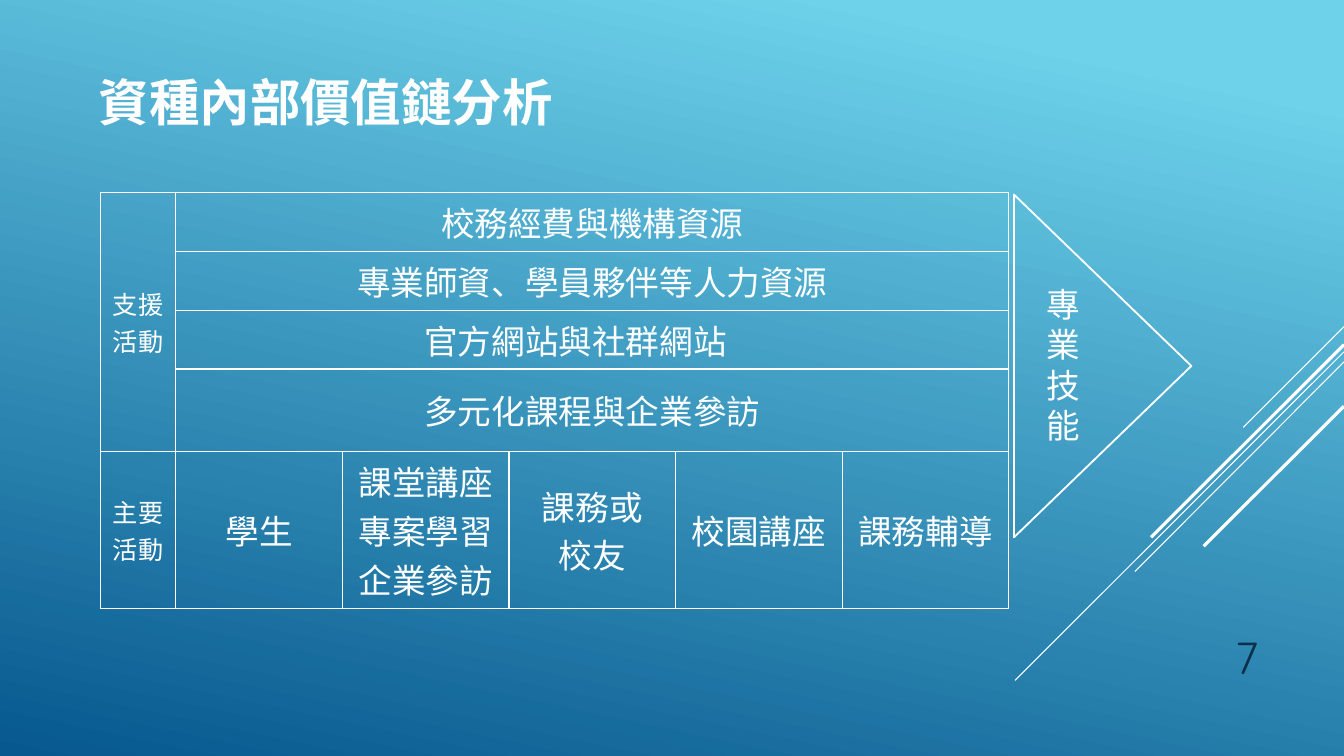
import pptx
import pptx.util
import pptx.dml.color
import pptx.enum.shapes
import pptx.enum.text
import pptx.oxml
import pptx.oxml.ns
import lxml.etree

Pt = pptx.util.Pt
ALIGN = pptx.enum.text.PP_ALIGN
ANCHOR = pptx.enum.text.MSO_ANCHOR
SHAPE = pptx.enum.shapes.MSO_SHAPE
WHITE = "FFFFFF"

SUPPORT_ACTIVITIES = ["校務經費與機構資源", "專業師資、學員夥伴等人力資源", "官方網站與社群網站　", "多元化課程與企業參訪"]
PRIMARY_ACTIVITIES = ["學生", "課堂講座專案學習\n企業參訪", "課務或\n校友", "校園講座", "課務輔導"]
ROW_HEIGHTS = [42, 42, 42, 59, 112]
STRIPES = [
    (960, 233.3, 888, 305.3, 0.75),
    (960, 251.3, 725, 486, 0.75),
    (960, 258.5, 810.7, 408.2, 0.75),
    (960, 246.2, 822.2, 383.8, 2.25),
    (960, 290.2, 859.7, 390.2, 2.25),
]


def rgb(hex_color):
    return pptx.dml.color.RGBColor.from_string(hex_color)


def write(frame, text, size=24, font="Arial", color=WHITE, bold=False,
          align=ALIGN.CENTER, anchor=ANCHOR.MIDDLE, spacing=None):
    frame.word_wrap = True
    frame.vertical_anchor = anchor
    frame.text = text
    for paragraph in frame.paragraphs:
        paragraph.alignment = align
        if spacing:
            paragraph.line_spacing = Pt(spacing)
        for run in paragraph.runs:
            run.font.name = font
            run.font.size = Pt(size)
            run.font.bold = bold
            run.font.color.rgb = rgb(color)


def paint_background(slide):
    fill = slide.background.fill
    fill.gradient()
    fill.gradient_angle = 258
    for stop, color, position in zip(fill.gradient_stops, ["6ED2EB", "06588E"], [0.1, 1]):
        stop.color.rgb = rgb(color)
        stop.position = position


def draw_stripes(slide):
    for x1, y1, x2, y2, width in STRIPES:
        stripe = slide.shapes.add_connector(
            pptx.enum.shapes.MSO_CONNECTOR.STRAIGHT, Pt(x1), Pt(y1), Pt(x2), Pt(y2))
        stripe.line.color.rgb = rgb(WHITE)
        stripe.line.width = Pt(width)
        lxml.etree.SubElement(stripe._element.spPr, pptx.oxml.ns.qn("a:effectLst"))


def place_title(slide, left, top, width, height):
    title = slide.shapes.title
    title.left, title.top, title.width, title.height = Pt(left), Pt(top), Pt(width), Pt(height)
    write(title.text_frame, "資種內部價值鏈分析", size=36, font="Quicksand", bold=True, align=ALIGN.LEFT)


def draw_margin_arrow(slide, left, top, width, height):
    arrow = slide.shapes.add_shape(
        SHAPE.ISOSCELES_TRIANGLE, Pt(left + (width - height) / 2),
        Pt(top + (height - width) / 2), Pt(height), Pt(width))
    arrow.rotation = 90
    arrow.shadow.inherit = False
    arrow.fill.background()
    arrow.line.color.rgb = rgb(WHITE)
    arrow.line.width = Pt(1.3)
    skills = slide.shapes.add_textbox(Pt(left + 15.5), Pt(top + (height - 124) / 2), Pt(39.6), Pt(124))
    write(skills.text_frame, "專業技能", font="Quicksand", anchor=ANCHOR.TOP, spacing=28.8)


def outline_cell(cell):
    cell.fill.background()
    properties = cell._tc.get_or_add_tcPr()
    for index, side in enumerate(["lnL", "lnR", "lnT", "lnB"]):
        properties.insert(index, pptx.oxml.parse_xml(
            f'<a:{side} {pptx.oxml.ns.nsdecls("a")} w="12700"><a:solidFill>'
            f'<a:srgbClr val="{WHITE}"/></a:solidFill></a:{side}>'))


def build_value_chain(slide, left, top, width, height):
    chain = slide.shapes.add_table(5, 6, Pt(left), Pt(top), Pt(width), Pt(height)).table
    chain.first_row = False
    chain.horz_banding = False
    label_width = 54
    for index, column in enumerate(chain.columns):
        column.width = Pt((width - label_width) / 5 if index else label_width)
    for row, row_height in zip(chain.rows, ROW_HEIGHTS):
        row.height = Pt(row_height)
    for cell in chain.iter_cells():
        outline_cell(cell)

    def fill_cell(row, column, text, size=24):
        cell = chain.cell(row, column)
        cell.vertical_anchor = ANCHOR.MIDDLE
        write(cell.text_frame, text, size=size)

    chain.cell(0, 0).merge(chain.cell(3, 0))
    fill_cell(0, 0, "支援活動", 18)
    fill_cell(4, 0, "主要活動", 18)
    for row, activity in enumerate(SUPPORT_ACTIVITIES):
        chain.cell(row, 1).merge(chain.cell(row, 5))
        fill_cell(row, 1, activity)
    for column, activity in enumerate(PRIMARY_ACTIVITIES, 1):
        fill_cell(4, column, activity)


def place_page_number(slide, left, top, width, height):
    number = slide.shapes.add_textbox(Pt(left), Pt(top), Pt(width), Pt(height))
    write(number.text_frame, "7", size=32, font="Quicksand", color="0A304A",
          align=ALIGN.RIGHT, anchor=ANCHOR.BOTTOM)


def main():
    deck = pptx.Presentation()
    deck.slide_width, deck.slide_height = Pt(960), Pt(540)
    slide = deck.slides.add_slide(deck.slide_layouts[5])
    paint_background(slide)
    draw_stripes(slide)
    draw_margin_arrow(slide, 724.3, 139, 126.7, 244.8)
    place_page_number(slide, 815.8, 439.2, 90, 52.6)
    place_title(slide, 63.4, 13, 825, 118.8)
    build_value_chain(slide, 71.6, 137.6, 649, sum(ROW_HEIGHTS))
    deck.save("out.pptx")


if __name__ == "__main__":
    main()
